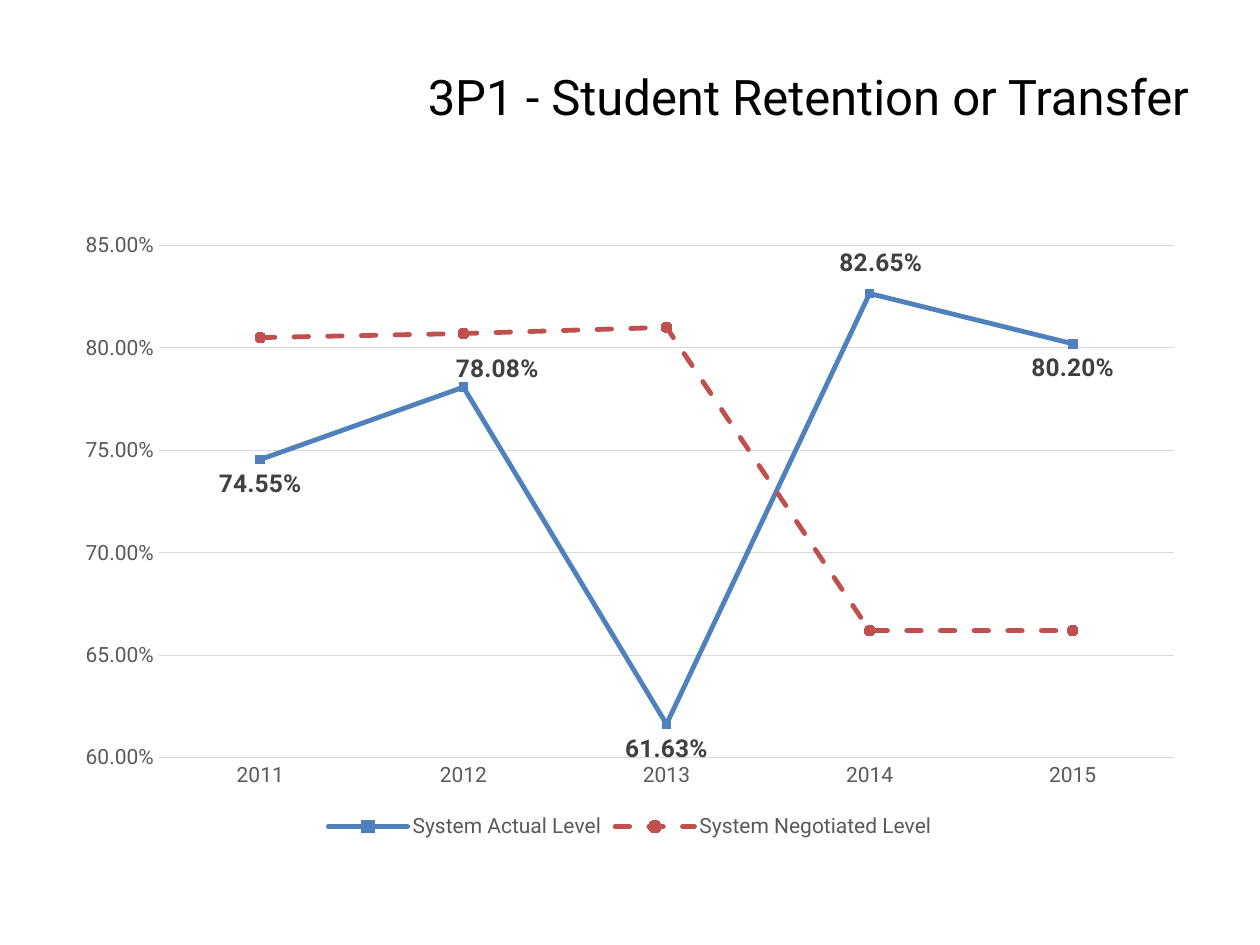
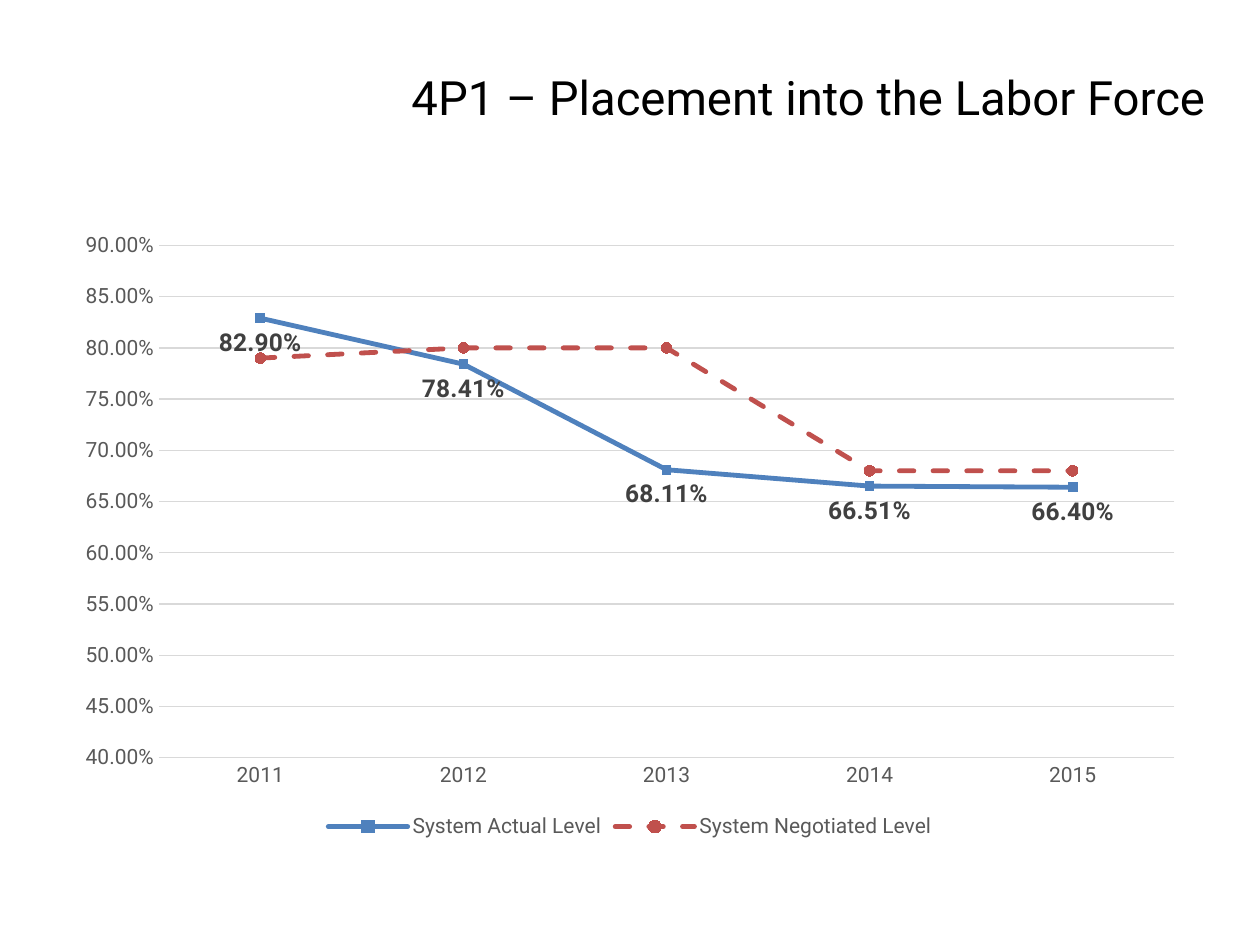
from dataclasses import dataclass

from lxml import etree
from pptx import Presentation
from pptx.chart.data import CategoryChartData
from pptx.dml.color import RGBColor
from pptx.enum.chart import (
    XL_CHART_TYPE, XL_LABEL_POSITION, XL_LEGEND_POSITION, XL_MARKER_STYLE, XL_TICK_MARK,
)
from pptx.enum.dml import MSO_LINE
from pptx.enum.text import MSO_ANCHOR, MSO_AUTO_SIZE, PP_ALIGN
from pptx.oxml.ns import qn
from pptx.util import Inches, Pt


@dataclass(frozen=True)
class Theme:
    font: str = "Roboto"
    black: str = "000000"
    axis_text: str = "595959"
    label_text: str = "404040"
    grid: str = "D9D9D9"
    actual: str = "4F81BD"
    negotiated: str = "C0504D"
    chart_size: int = 10
    axis_size: int = 12
    label_size: int = 14
    grid_width: float = 0.75
    series_width: float = 2.75


THEME = Theme()
PERCENT = "0.00%"
YEARS = ["2011", "2012", "2013", "2014", "2015"]
TITLE_FRAME = {"left": 3.08, "top": 0.25, "width": 6.67, "height": 1.03}
CHART_FRAME = [Inches(value) for value in (0.5, 1.75, 9, 4.95)]

SERIES_STYLES = [
    (THEME.actual, MSO_LINE.SOLID, XL_MARKER_STYLE.SQUARE, 5),
    (THEME.negotiated, MSO_LINE.DASH, XL_MARKER_STYLE.CIRCLE, 6),
]

# labels_above maps a point index to the label's shift, as a share of the chart size
SLIDES = [
    {
        "title": "3P1 - Student Retention or Transfer", "title_size": 28,
        "actual": [0.7455, 0.7808, 0.6163, 0.8265, 0.802],
        "negotiated": [0.805, 0.807, 0.81, 0.662, 0.662],
        "scale": (0.6, 0.85),
        "labels_above": {1: (0.03, 0.01), 3: (0.01, -0.01)},
    },
    {
        "title": "4P1 – Placement into the Labor Force", "title_size": 27,
        "actual": [0.829, 0.7841, 0.6811, 0.6651, 0.664],
        "negotiated": [0.79, 0.8, 0.8, 0.68, 0.68],
        "scale": (0.4, 0.9),
        "labels_above": {},
    },
]


def set_font(font, size, color, bold=False):
    for name, value in {"name": THEME.font, "size": Pt(size), "bold": bold}.items():
        setattr(font, name, value)
    font.color.rgb = RGBColor.from_string(color)


def set_line(line, width, color):
    line.width = Pt(width)
    line.color.rgb = RGBColor.from_string(color)


deck = Presentation()
deck.slide_width, deck.slide_height = Inches(10), Inches(7.5)
title_only = deck.slide_layouts.get_by_name("Title Only")

for content in SLIDES:
    page = deck.slides.add_slide(title_only)

    title = page.shapes.title
    for name, value in TITLE_FRAME.items():
        setattr(title, name, Inches(value))
    title.text_frame.text = content["title"]
    title.text_frame.auto_size = MSO_AUTO_SIZE.NONE
    title.text_frame.vertical_anchor = MSO_ANCHOR.MIDDLE
    para = title.text_frame.paragraphs[0]
    para.alignment = PP_ALIGN.CENTER
    set_font(para.runs[0].font, content["title_size"], THEME.black)

    data = CategoryChartData(number_format=PERCENT)
    data.categories = YEARS
    data.add_series("System Actual Level", content["actual"])
    data.add_series("System Negotiated Level", content["negotiated"])
    chart = page.shapes.add_chart(XL_CHART_TYPE.LINE_MARKERS, *CHART_FRAME, data).chart
    chart.has_title = False
    set_font(chart.font, THEME.chart_size, THEME.black)

    chart.has_legend = True
    chart.legend.position = XL_LEGEND_POSITION.BOTTOM
    chart.legend.include_in_layout = False
    set_font(chart.legend.font, THEME.axis_size, THEME.axis_text)

    years, levels = chart.category_axis, chart.value_axis
    for axis in (years, levels):
        axis.major_tick_mark = axis.minor_tick_mark = XL_TICK_MARK.NONE
        set_font(axis.tick_labels.font, THEME.axis_size, THEME.axis_text)
    set_line(years.format.line, THEME.grid_width, THEME.grid)
    levels.minimum_scale, levels.maximum_scale = content["scale"]
    levels.major_unit = 0.05
    levels.tick_labels.number_format = PERCENT
    levels.tick_labels.number_format_is_linked = False
    levels.format.line.fill.background()
    levels.has_major_gridlines = True
    set_line(levels.major_gridlines.format.line, THEME.grid_width, THEME.grid)

    plot = chart.plots[0]
    plot.vary_by_categories = False
    for series, (color, dash, marker_style, marker_size) in zip(plot.series, SERIES_STYLES):
        series.smooth = False
        set_line(series.format.line, THEME.series_width, color)
        series.format.line.dash_style = dash
        series._element.find(f"{qn('c:spPr')}/{qn('a:ln')}").set("cap", "rnd")
        series.marker.style = marker_style
        series.marker.size = marker_size
        series.marker.format.fill.solid()
        series.marker.format.fill.fore_color.rgb = RGBColor.from_string(color)
        series.marker.format.line.fill.background()

    actual = plot.series[0]
    label_format = {
        "show_value": True, "position": XL_LABEL_POSITION.BELOW,
        "number_format": PERCENT, "number_format_is_linked": False,
    }
    for name, value in label_format.items():
        setattr(actual.data_labels, name, value)
    set_font(actual.data_labels.font, THEME.label_size, THEME.label_text, bold=True)

    for index, shift in content["labels_above"].items():
        label = actual.points[index].data_label
        set_font(label.font, THEME.label_size, THEME.label_text, bold=True)
        label.position = XL_LABEL_POSITION.ABOVE
        point_label = actual._element.xpath(f"c:dLbls/c:dLbl[c:idx/@val='{index}']")[0]
        layout = etree.Element(qn("c:layout"))
        manual = etree.SubElement(layout, qn("c:manualLayout"))
        for direction, share in zip("xy", shift):
            etree.SubElement(manual, qn(f"c:{direction}")).set("val", str(share))
        point_label.find(qn("c:idx")).addnext(layout)

deck.save("out.pptx")
